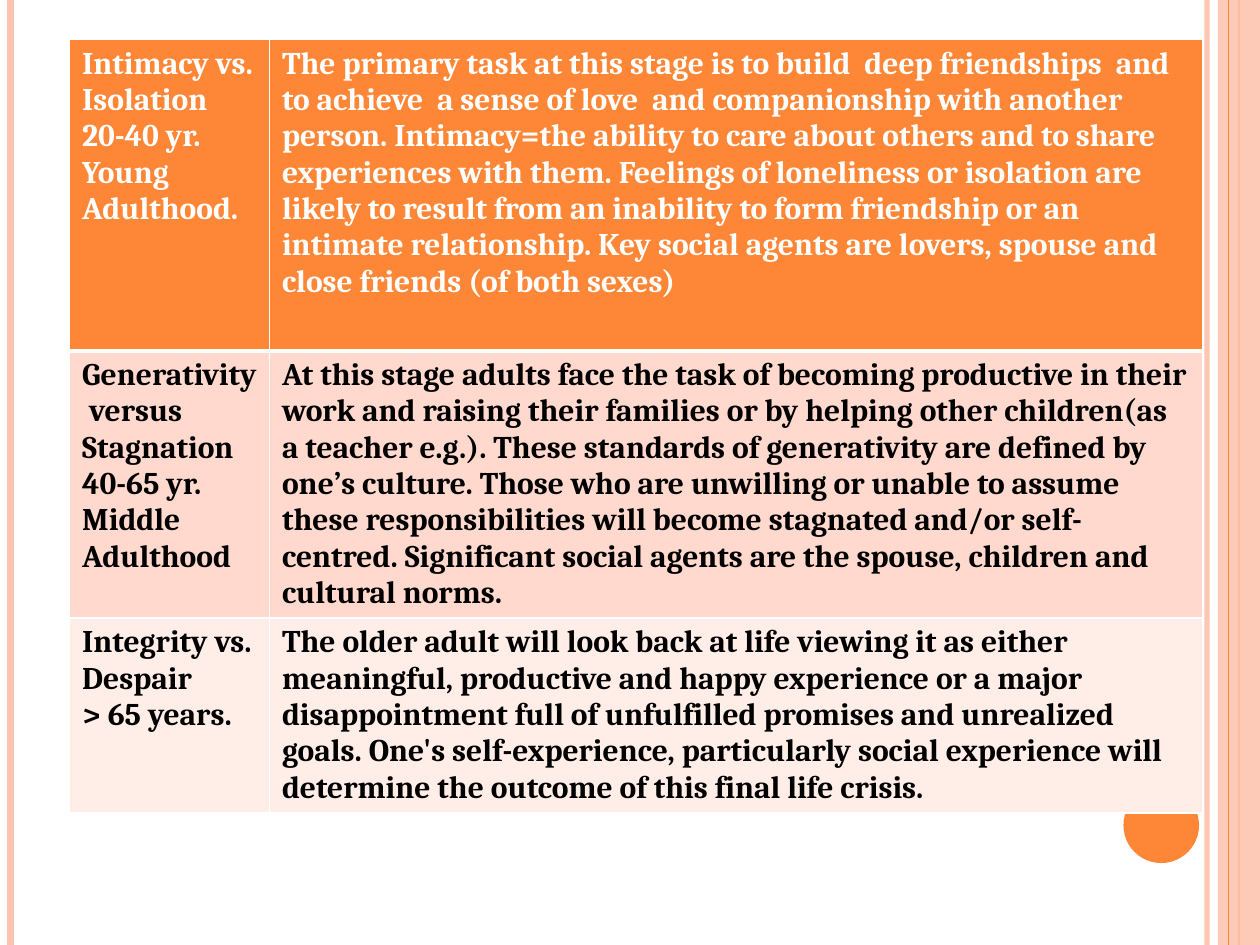
import pptx
import pptx.dml.color
import pptx.enum.shapes
import pptx.oxml
import pptx.oxml.ns
import pptx.util

Pt = pptx.util.Pt
RGB = pptx.dml.color.RGBColor.from_string
qn = pptx.oxml.ns.qn
SHAPE = pptx.enum.shapes.MSO_SHAPE

THEME = {
    "font": "Cambria", "size": 18,
    "accent": "FE8637", "pale": "FEC3AE", "white": "FFFFFF", "black": "000000",
    "rows": ["FE8637", "FFD9CE", "FFEDE8"],
}


def fade(shape, share):
    """Set the opacity, in percent, of the shape's only colour."""
    color = next(shape.element.spPr.iter(qn("a:srgbClr")))
    alpha = color.makeelement(qn("a:alpha"), {"val": str(share * 1000)})
    color.append(alpha)


def edge(cell, side, width):
    """Draw one white cell border; side is L, R, T or B."""
    cell._tc.get_or_add_tcPr().append(pptx.oxml.parse_xml(
        f'<a:ln{side} xmlns:a="http://schemas.openxmlformats.org/drawingml/2006/main" '
        f'w="{Pt(width)}"><a:solidFill><a:srgbClr val="{THEME["white"]}"/>'
        f'</a:solidFill></a:ln{side}>'))


deck = pptx.Presentation()
deck.slide_width, deck.slide_height = Pt(720), Pt(540)
slide = deck.slides.add_slide(deck.slide_layouts[6])
shapes = slide.shapes

# Side stripes: x, width, colour, opacity; the band goes beneath the last one
stripes = [
    (689.75, 3, "pale", 93),
    (6, 4.5, "pale", 100),
    (708, 1.5, "accent", 100),
    (702, 0.75, "accent", 100),
]
for x, width, color, share in stripes:
    if x == 702:
        band = shapes.add_shape(SHAPE.RECTANGLE, Pt(696), 0, Pt(24), Pt(540))
        band.shadow.inherit = False
        band.fill.solid()
        band.fill.fore_color.rgb = RGB(THEME["pale"])
        band.line.fill.background()
        fade(band, 87)
    line = shapes.add_connector(
        pptx.enum.shapes.MSO_CONNECTOR.STRAIGHT, Pt(x), 0, Pt(x), Pt(540))
    line.line.width = Pt(width)
    line.line.color.rgb = RGB(THEME[color])
    if share < 100:
        fade(line, share)
    props = line.element.spPr
    props.append(props.makeelement(qn("a:effectLst"), {}))

dot = shapes.add_shape(SHAPE.OVAL, Pt(642), Pt(450), Pt(43.2), Pt(43.2))
dot.shadow.inherit = False
dot.fill.solid()
dot.fill.fore_color.rgb = RGB(THEME["accent"])
dot.line.fill.background()

# Stages of adult life
stages = [
    (["Intimacy vs. Isolation", "20-40 yr.", "Young", "Adulthood."],
     "The primary task at this stage is to build  deep friendships  and to "
     "achieve  a sense of love  and companionship with another person. "
     "Intimacy=the ability to care about others and to share experiences with "
     "them. Feelings of loneliness or isolation are likely to result from an "
     "inability to form friendship or an intimate relationship. Key social "
     "agents are lovers, spouse and close friends (of both sexes)"),
    (["Generativity  versus Stagnation", "40-65 yr.", "Middle Adulthood"],
     "At this stage adults face the task of becoming productive in their work "
     "and raising their families or by helping other children(as a teacher "
     "e.g.). These standards of generativity are defined by one’s culture. "
     "Those who are unwilling or unable to assume these responsibilities will "
     "become stagnated and/or self-centred. Significant social agents are the "
     "spouse, children and cultural norms."),
    (["Integrity vs.", "Despair", "> 65 years."],
     "The older adult will look back at life viewing it as either meaningful, "
     "productive and happy experience or a major disappointment full of "
     "unfulfilled promises and unrealized goals. One's self-experience, "
     "particularly social experience will determine the outcome of this final "
     "life crisis."),
]
widths, heights = [114.2, 533.4], [178, 152.5, 111.5]
table = shapes.add_table(
    3, 2, Pt(39.8), Pt(22.5), Pt(sum(widths)), Pt(sum(heights))).table
for col, width in zip(table.columns, widths):
    col.width = Pt(width)

for r, (label, task) in enumerate(stages):
    table.rows[r].height = Pt(heights[r])
    for c, lines in enumerate([label, [task]]):
        cell = table.cell(r, c)
        for side in "LRTB":
            heavy = (r, side) in [(0, "B"), (1, "T")]
            edge(cell, side, 3 if heavy else 1)
        cell.fill.solid()
        cell.fill.fore_color.rgb = RGB(THEME["rows"][r])
        cell.text_frame.text = "\n".join(lines)
        for para in cell.text_frame.paragraphs:
            para.font.name = THEME["font"]
            para.font.size = Pt(THEME["size"])
            para.font.bold = True
            para.font.color.rgb = RGB(THEME["black" if r else "white"])

deck.save("out.pptx")
